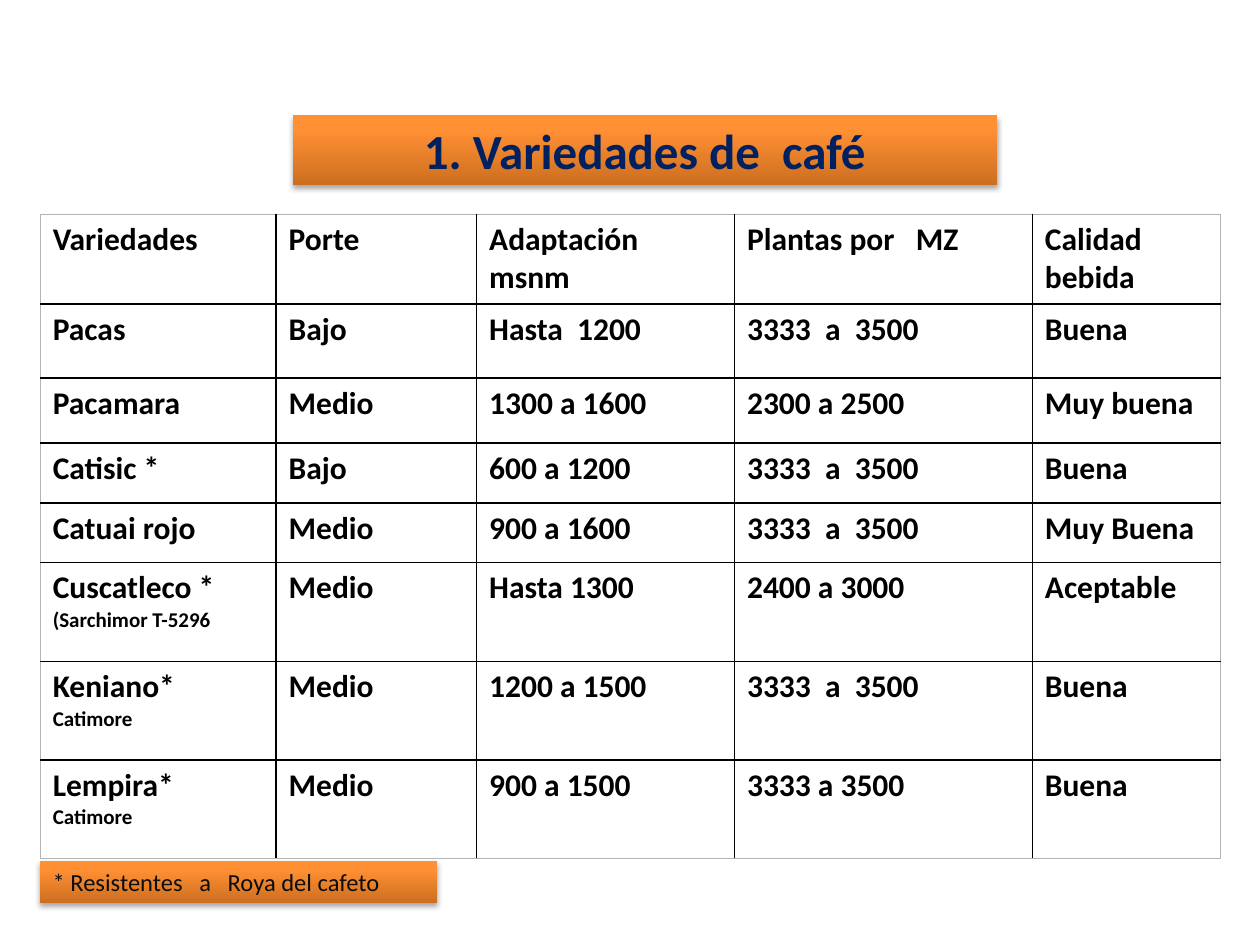
from copy import deepcopy

from lxml import etree
from pptx import Presentation
from pptx.dml.color import RGBColor
from pptx.enum.text import MSO_ANCHOR, MSO_AUTO_SIZE, PP_ALIGN
from pptx.oxml.ns import qn
from pptx.util import Pt

CENTER = PP_ALIGN.CENTER
LEFT = PP_ALIGN.LEFT
MIDDLE = MSO_ANCHOR.MIDDLE
NO_FIT = MSO_AUTO_SIZE.NONE
GROW = MSO_AUTO_SIZE.SHAPE_TO_FIT_TEXT

BLACK = RGBColor(0x00, 0x00, 0x00)
GRAY = RGBColor(0xB4, 0xB4, 0xB4)
NAVY = RGBColor(0x00, 0x20, 0x60)
INK = RGBColor(0x0D, 0x0D, 0x0D)
ORANGE_STOPS = [
    (0, RGBColor(0xCC, 0x6E, 0x20)),
    (0.8, RGBColor(0xFF, 0x90, 0x34)),
    (1, RGBColor(0xFF, 0x91, 0x36)),
]

FONT = "Calibri"
MARGIN_LEFT = 23
COLUMN_WIDTHS = [134.8, 114.6, 147.4, 170.2, 107.6]
ROW_HEIGHTS = [51.4, 42.3, 37.1, 34.4, 34, 56.4, 56.4, 56.4]
VARIETIES = [
    ["Variedades", "Porte", "Adaptación msnm", "Plantas por   MZ", "Calidad bebida"],
    ["Pacas", "Bajo", "Hasta  1200", "3333  a  3500", "Buena"],
    ["Pacamara", "Medio", "1300 a 1600", "2300 a 2500", "Muy buena"],
    ["Catisic *", "Bajo", "600 a 1200", "3333  a  3500", "Buena"],
    ["Catuai rojo", "Medio", "900 a 1600", "3333  a  3500", "Muy Buena"],
    ["Cuscatleco *\n(Sarchimor T-5296", "Medio", "Hasta 1300", "2400 a 3000", "Aceptable"],
    ["Keniano*\nCatimore", "Medio", "1200 a 1500", "3333  a  3500", "Buena"],
    ["Lempira*\nCatimore", "Medio", "900 a 1500", "3333 a 3500", "Buena"],
]


def add_text(paragraph, text, size, color, bold=False, align=LEFT):
    paragraph.alignment = align
    run = paragraph.add_run()
    run.text = text
    run.font.name = FONT
    run.font.size = Pt(size)
    run.font.bold = bold
    run.font.color.rgb = color


def style_banner(banner):
    banner.fill.gradient()
    banner.fill.gradient_angle = 90
    properties = banner._element.spPr
    stop_list = properties.find(".//" + qn("a:gsLst"))
    stop_list.append(deepcopy(stop_list[-1]))
    for stop, (position, color) in zip(banner.fill.gradient_stops, ORANGE_STOPS):
        stop.position = position
        stop.color.rgb = color
    effects = etree.SubElement(properties, qn("a:effectLst"))
    shadow = etree.SubElement(
        effects, qn("a:outerShdw"), blurRad=str(Pt(3.1)), dist=str(Pt(1.8)),
        dir="5400000", rotWithShape="0")
    shade = etree.SubElement(shadow, qn("a:srgbClr"), val=str(BLACK))
    etree.SubElement(shade, qn("a:alpha"), val="35000")


def add_title(slide):
    title = slide.shapes.title
    title.left, title.top = Pt(167.2), Pt(66)
    title.width, title.height = Pt(402.5), Pt(39.8)
    style_banner(title)
    frame = title.text_frame
    frame.auto_size = NO_FIT
    frame.vertical_anchor = MIDDLE
    add_text(frame.paragraphs[0], "1. Variedades de  café", 28, NAVY, True, CENTER)


def set_borders(cell, outer_sides):
    properties = cell._tc.get_or_add_tcPr()
    for side, is_outer in outer_sides.items():
        width, color = (0.5, GRAY) if is_outer else (1, BLACK)
        border = etree.SubElement(properties, qn("a:ln" + side), w=str(Pt(width)))
        fill = etree.SubElement(border, qn("a:solidFill"))
        etree.SubElement(fill, qn("a:srgbClr"), val=str(color))


def fill_cell(cell, text):
    name, *details = text.split("\n")
    frame = cell.text_frame
    add_text(frame.paragraphs[0], name, 18, BLACK, True)
    for detail in details:
        add_text(frame.add_paragraph(), detail, 12, BLACK, True)


def add_varieties_table(slide):
    row_count, column_count = len(ROW_HEIGHTS), len(COLUMN_WIDTHS)
    table = slide.shapes.add_table(
        row_count, column_count, Pt(MARGIN_LEFT), Pt(122.4),
        Pt(sum(COLUMN_WIDTHS)), Pt(sum(ROW_HEIGHTS))).table
    table.first_row = False
    table.horz_banding = False
    for column, width in zip(table.columns, COLUMN_WIDTHS):
        column.width = Pt(width)
    for row, height in zip(table.rows, ROW_HEIGHTS):
        row.height = Pt(height)
    for r, variety in enumerate(VARIETIES):
        for c, text in enumerate(variety):
            cell = table.cell(r, c)
            fill_cell(cell, text)
            set_borders(cell, {
                "L": c == 0, "R": c == column_count - 1,
                "T": r == 0, "B": r == row_count - 1})
            cell.fill.background()


def add_footnote(slide):
    footnote = slide.shapes.add_textbox(Pt(MARGIN_LEFT), Pt(491.8), Pt(226.8), Pt(24.3))
    style_banner(footnote)
    frame = footnote.text_frame
    frame.word_wrap = True
    frame.auto_size = GROW
    add_text(frame.paragraphs[0], "* Resistentes   a   Roya del cafeto", 14, INK)


def main():
    presentation = Presentation()
    presentation.slide_width, presentation.slide_height = Pt(720), Pt(540)
    slide = presentation.slides.add_slide(presentation.slide_layouts[5])
    add_title(slide)
    add_varieties_table(slide)
    add_footnote(slide)
    presentation.save("out.pptx")


if __name__ == "__main__":
    main()
